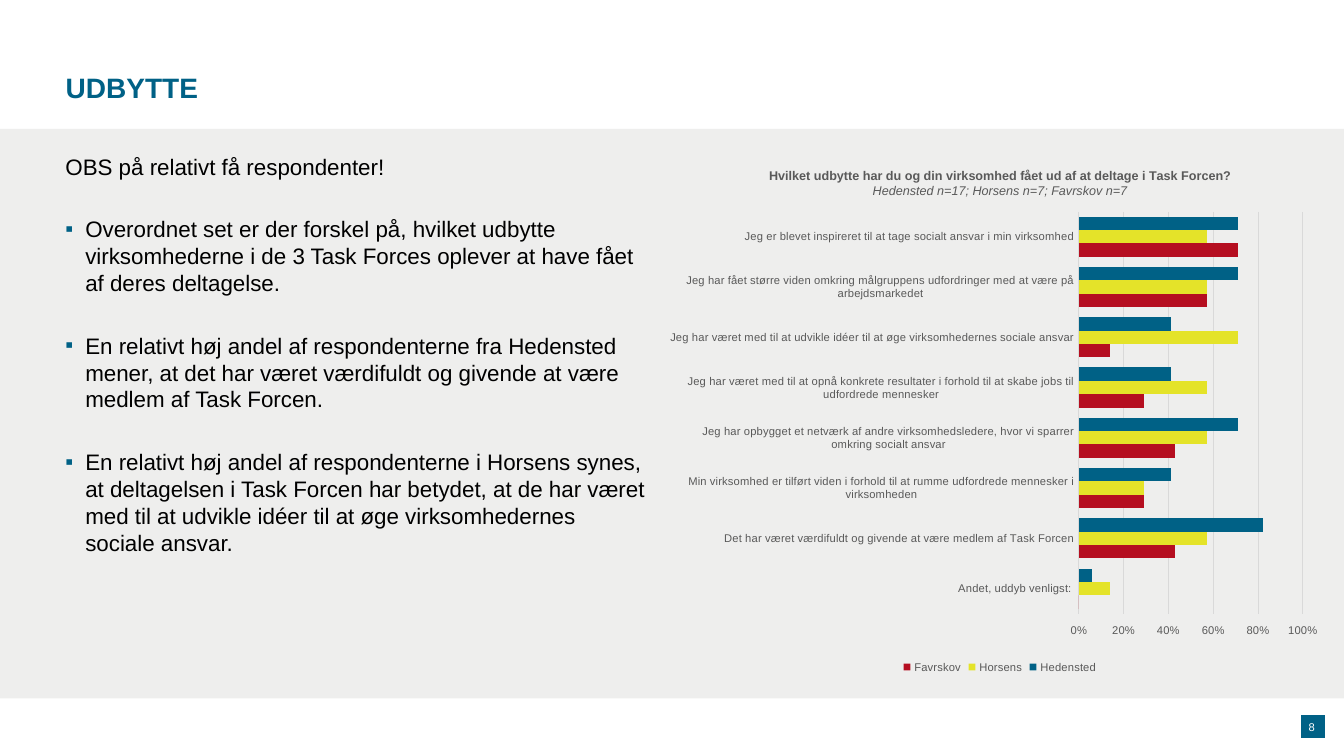
"""Build the slide on what companies gained from the Task Forces."""
from lxml import etree
from pptx import Presentation
from pptx import util as u
from pptx.chart.data import CategoryChartData
from pptx.dml.color import RGBColor
from pptx.enum import chart as charts, shapes, text
from pptx.oxml import ns

BLUE = RGBColor(0x00, 0x61, 0x86)
YELLOW = RGBColor(0xE4, 0xE3, 0x29)
RED = RGBColor(0xB5, 0x0E, 0x20)
BAND_GREY = RGBColor(0xEE, 0xEE, 0xED)
LINE_GREY = RGBColor(0xD9, 0xD9, 0xD9)
TEXT_GREY = RGBColor(0x59, 0x59, 0x59)
BLACK = RGBColor(0, 0, 0)
WHITE = RGBColor(0xFF, 0xFF, 0xFF)

INTRO = "OBS på relativt få respondenter!"
BULLETS = [
    "Overordnet set er der forskel på, hvilket udbytte virksomhederne i de 3 Task Forces "
    "oplever at have fået af deres deltagelse.",
    "En relativt høj andel af respondenterne fra Hedensted mener, at det har været "
    "værdifuldt og givende at være medlem af Task Forcen.",
    "En relativt høj andel af respondenterne i Horsens synes, at deltagelsen i Task Forcen "
    "har betydet, at de har været med til at udvikle idéer til at øge virksomhedernes "
    "sociale ansvar.",
]
CATEGORIES = [
    "Jeg er blevet inspireret til at tage socialt ansvar i min virksomhed",
    "Jeg har fået større viden omkring målgruppens udfordringer med at være på arbejdsmarkedet",
    "Jeg har været med til at udvikle idéer til at øge virksomhedernes sociale ansvar",
    "Jeg har været med til at opnå konkrete resultater i forhold til at skabe jobs til "
    "udfordrede mennesker",
    "Jeg har opbygget et netværk af andre virksomhedsledere, hvor vi sparrer omkring "
    "socialt ansvar",
    "Min virksomhed er tilført viden i forhold til at rumme udfordrede mennesker i "
    "virksomheden",
    "Det har været værdifuldt og givende at være medlem af Task Forcen",
    "Andet, uddyb venligst: ",
]
SERIES = [
    ("Hedensted", BLUE, [0.71, 0.71, 0.41, 0.41, 0.71, 0.41, 0.82, 0.06]),
    ("Horsens", YELLOW, [0.57, 0.57, 0.71, 0.57, 0.57, 0.29, 0.57, 0.14]),
    ("Favrskov", RED, [0.71, 0.57, 0.14, 0.29, 0.43, 0.29, 0.43, 0]),
]
PLOT_LAYOUT = {"x": 0.62, "y": 0.12, "w": 0.34, "h": 0.76}


def format_font(font, size, color, bold=False, italic=False):
    font.name, font.size = "Arial", u.Pt(size)
    font.bold, font.italic = bold, italic
    font.color.rgb = color


def write(paragraph, content, size, color, align=text.PP_ALIGN.LEFT, **style):
    paragraph.alignment = align
    run = paragraph.add_run()
    run.text = content
    format_font(run.font, size, color, **style)


presentation = Presentation()
presentation.slide_width, presentation.slide_height = u.Cm(33.87), u.Cm(19.05)
slide = presentation.slides.add_slide(presentation.slide_layouts[5])

for kind, color, box in [
    (shapes.MSO_SHAPE.FLOWCHART_PROCESS, BLUE, (32.78, 18.01, 0.6, 0.6)),
    (shapes.MSO_SHAPE.RECTANGLE, BAND_GREY, (0, 3.25, 33.87, 14.35)),
]:
    shape = slide.shapes.add_shape(kind, *map(u.Cm, box))
    shape.shadow.inherit = False
    shape.fill.solid()
    shape.fill.fore_color.rgb = color
    shape.line.fill.background()

number = slide.shapes.add_textbox(u.Cm(32.69), u.Cm(17.93), u.Cm(0.74), u.Cm(0.79))
frame = number.text_frame
frame.margin_left = frame.margin_right = frame.margin_top = frame.margin_bottom = 0
frame.vertical_anchor = text.MSO_ANCHOR.MIDDLE
frame.word_wrap = True
write(frame.paragraphs[0], "8", 8, WHITE, align=text.PP_ALIGN.CENTER)

title = slide.shapes.title
title.left, title.top, title.width, title.height = map(u.Cm, (1.4, 1.65, 31.06, 1.45))
title.text_frame.vertical_anchor = text.MSO_ANCHOR.TOP
write(title.text_frame.paragraphs[0], "UDBYTTE", 20, BLUE, bold=True)

body = slide.shapes.add_textbox(u.Cm(1.4), u.Cm(3.73), u.Cm(15.09), u.Cm(13.34))
frame = body.text_frame
frame.word_wrap = True
frame.margin_right = u.Cm(0.15)
write(frame.paragraphs[0], INTRO, 16, BLACK)
for bullet in BULLETS:
    paragraph = frame.add_paragraph()
    properties = paragraph._p.get_or_add_pPr()
    properties.set("marL", str(u.Cm(0.5)))
    properties.set("indent", str(-u.Cm(0.5)))
    bullet_color = etree.SubElement(properties, ns.qn("a:buClr"))
    etree.SubElement(bullet_color, ns.qn("a:srgbClr"), val=str(BLUE))
    etree.SubElement(properties, ns.qn("a:buFont"), typeface="Arial")
    etree.SubElement(properties, ns.qn("a:buChar"), char="▪")
    paragraph.space_before = u.Pt(25.5)
    write(paragraph, bullet, 16, BLACK)

chart_data = CategoryChartData(number_format="0%")
chart_data.categories = CATEGORIES
for name, color, values in SERIES:
    chart_data.add_series(name, values)
chart = slide.shapes.add_chart(
    charts.XL_CHART_TYPE.BAR_CLUSTERED,
    u.Cm(16.89), u.Cm(3.73), u.Cm(16.61), u.Cm(13.34), chart_data,
).chart
format_font(chart.font, 10, BLACK)

chart.has_title = True
heading = chart.chart_title.text_frame
write(heading.paragraphs[0],
      "Hvilket udbytte har du og din virksomhed fået ud af at deltage i Task Forcen?",
      9, TEXT_GREY, align=text.PP_ALIGN.CENTER, bold=True)
write(heading.add_paragraph(), "Hedensted n=17; Horsens n=7; Favrskov n=7",
      9, TEXT_GREY, align=text.PP_ALIGN.CENTER, italic=True)

chart.has_legend = True
chart.legend.position = charts.XL_LEGEND_POSITION.BOTTOM
chart.legend.include_in_layout = False
format_font(chart.legend.font, 8, TEXT_GREY)

plot = chart.plots[0]
plot.gap_width, plot.overlap = 75, 0
plot.vary_by_categories = False
for series, (name, color, values) in zip(plot.series, SERIES):
    series.format.fill.solid()
    series.format.fill.fore_color.rgb = color
    series.invert_if_negative = False

category_axis, value_axis = chart.category_axis, chart.value_axis
for axis in (category_axis, value_axis):
    axis.major_tick_mark = axis.minor_tick_mark = charts.XL_TICK_MARK.NONE
    format_font(axis.tick_labels.font, 8, TEXT_GREY)
category_axis.reverse_order = True
value_axis.tick_label_position = charts.XL_TICK_LABEL_POSITION.HIGH
value_axis.minimum_scale, value_axis.maximum_scale = 0, 1
value_axis.major_unit = 0.2
value_axis.tick_labels.number_format = "0%"
value_axis.tick_labels.number_format_is_linked = False
value_axis.format.line.fill.background()
value_axis.has_major_gridlines = True
for line in (category_axis.format.line, value_axis.major_gridlines.format.line):
    line.color.rgb = LINE_GREY
    line.width = u.Pt(0.75)

plot_area = chart._chartSpace.chart.plotArea
for layout in plot_area.findall(ns.qn("c:layout")):
    plot_area.remove(layout)
layout = etree.Element(ns.qn("c:layout"))
plot_area.insert(0, layout)
manual = etree.SubElement(layout, ns.qn("c:manualLayout"))
etree.SubElement(manual, ns.qn("c:layoutTarget"), val="inner")
for side in "xy":
    etree.SubElement(manual, ns.qn(f"c:{side}Mode"), val="edge")
for side, share in PLOT_LAYOUT.items():
    etree.SubElement(manual, ns.qn(f"c:{side}"), val=str(share))

presentation.save("out.pptx")
